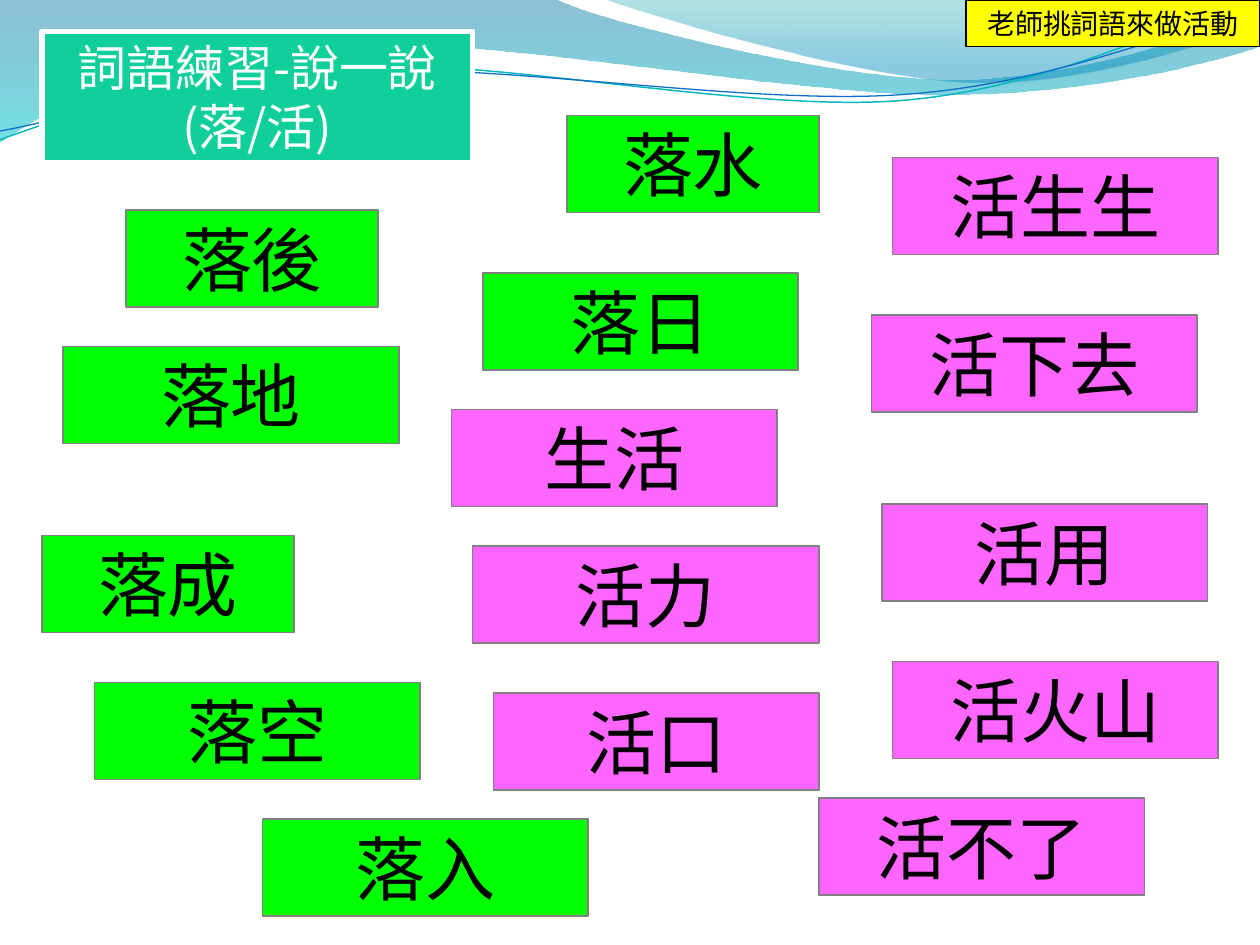
"""Build a vocabulary practice slide with word cards under a wave banner."""
from lxml.etree import SubElement
from pptx import Presentation
from pptx.dml.color import RGBColor
from pptx.enum.shapes import MSO_SHAPE
from pptx.enum.text import MSO_ANCHOR, MSO_AUTO_SIZE, PP_ALIGN
from pptx.oxml.ns import qn
from pptx.util import Inches, Pt

FONT = "Noto Sans CJK SC"
COLORS = {
    "green": "00FF00", "pink": "FF66FF", "yellow": "FFFF00", "teal": "10CF9B",
    "gray": "808080", "black": "000000", "white": "FFFFFF",
    "deep_blue": "0074A1", "cyan": "00C6CF", "sea": "00A1A9", "blue": "008BBF",
    "teal_line": "0AB8BF", "blue_line": "0F6FC6",
}
GRID = 12
CARD_HEIGHT = 0.77
TITLE = ("詞語練習-說一說(落/活)", 4, 3, 41, "teal")
NOTE = ("老師挑詞語來做活動", 92, 0, 28, "yellow")
CARDS_BEFORE_TITLE = [
    ("落日", 46, 26, 30, "green"), ("落成", 4, 51, 24, "green"),
    ("落後", 12, 20, 24, "green"), ("落地", 6, 33, 32, "green"),
    ("活力", 45, 52, 33, "pink"), ("落空", 9, 65, 31, "green"),
]
CARDS_AFTER_TITLE = [
    ("活不了", 78, 76, 31, "pink"), ("落入", 25, 78, 31, "green"),
    ("落水", 54, 11, 24, "green"), ("活生生", 85, 15, 31, "pink"),
    ("活口", 47, 66, 31, "pink"), ("生活", 43, 39, 31, "pink"),
    ("活用", 84, 48, 31, "pink"), ("活下去", 83, 30, 31, "pink"),
    ("活火山", 85, 63, 31, "pink"),
]
WAVES = [
    ([(0, 0), (4.4, -0.01), (4.76, 0.17, 6.64, 0.63, 7.58, 0.63),
      (8.53, 0.63, 9.58, 0.26, 10, 0.09), (10.01, 0.36),
      (9.83, 0.44, 8.7, 0.76, 7.46, 0.75), (6.22, 0.75, 3.82, 0.28, 2.57, 0.34),
      (1.29, 0.36, 0.46, 0.83, -0.01, 1.13)],
     [(0, "deep_blue", 45), (1, "cyan", 55)]),
    ([(4.79, -0.01), (5.09, 0.11, 6.82, 0.62, 7.69, 0.65),
      (8.56, 0.69, 9.61, 0.32, 10, 0.21), (10, 0)],
     [(0, "sea", 30), (0.8, "blue", 45)]),
]
RIPPLES = [
    ([(0, 1.11), (0.48, 0.93, 1.58, 0.57, 2.77, 0.52),
      (3.95, 0.47, 5.93, 0.89, 7.13, 0.8), (8.33, 0.71, 9.38, 0.15, 9.98, -0.02)],
     "teal_line", 0.85),
    ([(0, 1.04), (0.47, 0.96, 1.64, 0.61, 2.83, 0.56),
      (4.03, 0.51, 5.97, 0.84, 7.17, 0.75), (8.36, 0.67, 9.41, 0.21, 10, 0.06)],
     "blue_line", 0.75),
]


def rgb(name):
    return RGBColor.from_string(COLORS[name])


def add_curve(slide, steps, close):
    ends = [tuple(map(Inches, step[-2:])) for step in steps]
    builder = slide.shapes.build_freeform(*ends[0])
    builder.add_line_segments(ends[1:], close=close)
    sp = builder.convert_to_shape()
    sp.shadow.inherit = False
    segments = list(sp._element.spPr.iter(qn("a:lnTo")))
    for segment, step in zip(segments, steps[1:]):
        if len(step) == 6:
            segment.tag = qn("a:cubicBezTo")
            for i, (x, y) in enumerate((step[:2], step[2:4])):
                pt = SubElement(segment, qn("a:pt"), x=str(Inches(x) - sp.left),
                                y=str(Inches(y) - sp.top))
                segment.insert(i, pt)
    return sp


def add_wave(slide, steps, stops):
    sp = add_curve(slide, steps, True)
    sp.line.fill.background()
    sp.fill.gradient()
    sp.fill.gradient_angle = 270
    nodes = sp._element.spPr.iter(qn("a:gs"))
    for stop, node, (position, color, alpha) in zip(sp.fill.gradient_stops, nodes, stops):
        stop.position = position
        stop.color.rgb = rgb(color)
        SubElement(node[0], qn("a:alpha"), val=str(alpha * 1000))


def add_ripple(slide, steps, color, width):
    sp = add_curve(slide, steps, False)
    sp.fill.background()
    sp.line.color.rgb = rgb(color)
    sp.line.width = Pt(width)


def add_label(slide, text, col, row, span, fill, height=CARD_HEIGHT,
              line="gray", width=0.75, size=40, color="black"):
    left, top, across = (Inches(n / GRID) for n in (col, row, span))
    sp = slide.shapes.add_shape(MSO_SHAPE.RECTANGLE, left, top, across, Inches(height))
    sp.shadow.inherit = False
    sp.fill.solid()
    sp.fill.fore_color.rgb = rgb(fill)
    sp.line.color.rgb = rgb(line)
    sp.line.width = Pt(width)
    tf = sp.text_frame
    tf.word_wrap = True
    tf.auto_size = MSO_AUTO_SIZE.SHAPE_TO_FIT_TEXT
    tf.vertical_anchor = MSO_ANCHOR.TOP
    p = tf.paragraphs[0]
    p.alignment = PP_ALIGN.CENTER
    r = p.add_run()
    r.text = text
    r.font.size = Pt(size)
    r.font.name = FONT
    r.font.color.rgb = rgb(color)
    SubElement(r.font._element, qn("a:ea"), typeface=FONT)


def main():
    prs = Presentation()
    prs.slide_width, prs.slide_height = Inches(10), Inches(7.5)
    slide = prs.slides.add_slide(prs.slide_layouts[6])
    for wave in WAVES:
        add_wave(slide, *wave)
    for ripple in RIPPLES:
        add_ripple(slide, *ripple)
    for card in CARDS_BEFORE_TITLE:
        add_label(slide, *card)
    add_label(slide, *TITLE, height=1.04, line="white", width=3, size=28, color="white")
    for card in CARDS_AFTER_TITLE:
        add_label(slide, *card)
    add_label(slide, *NOTE, height=0.37, line="black", size=16)
    prs.save("out.pptx")


if __name__ == "__main__":
    main()
